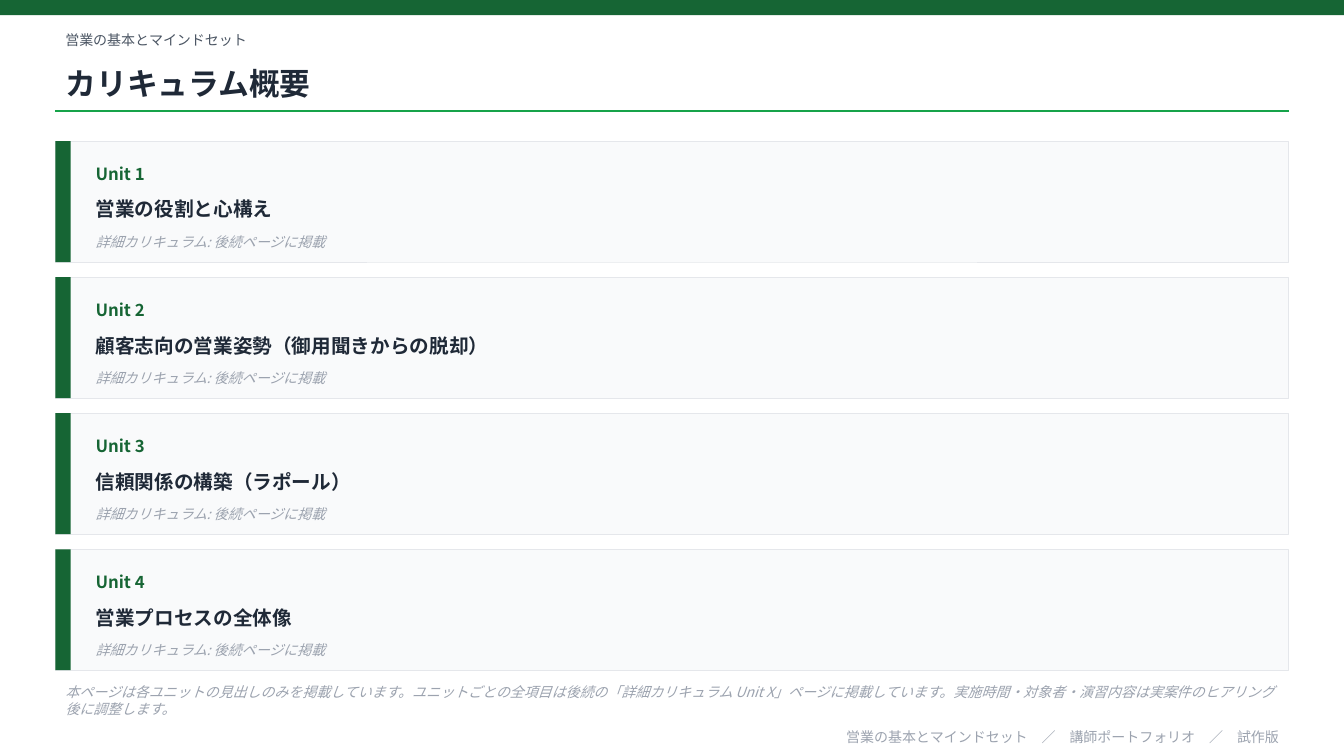
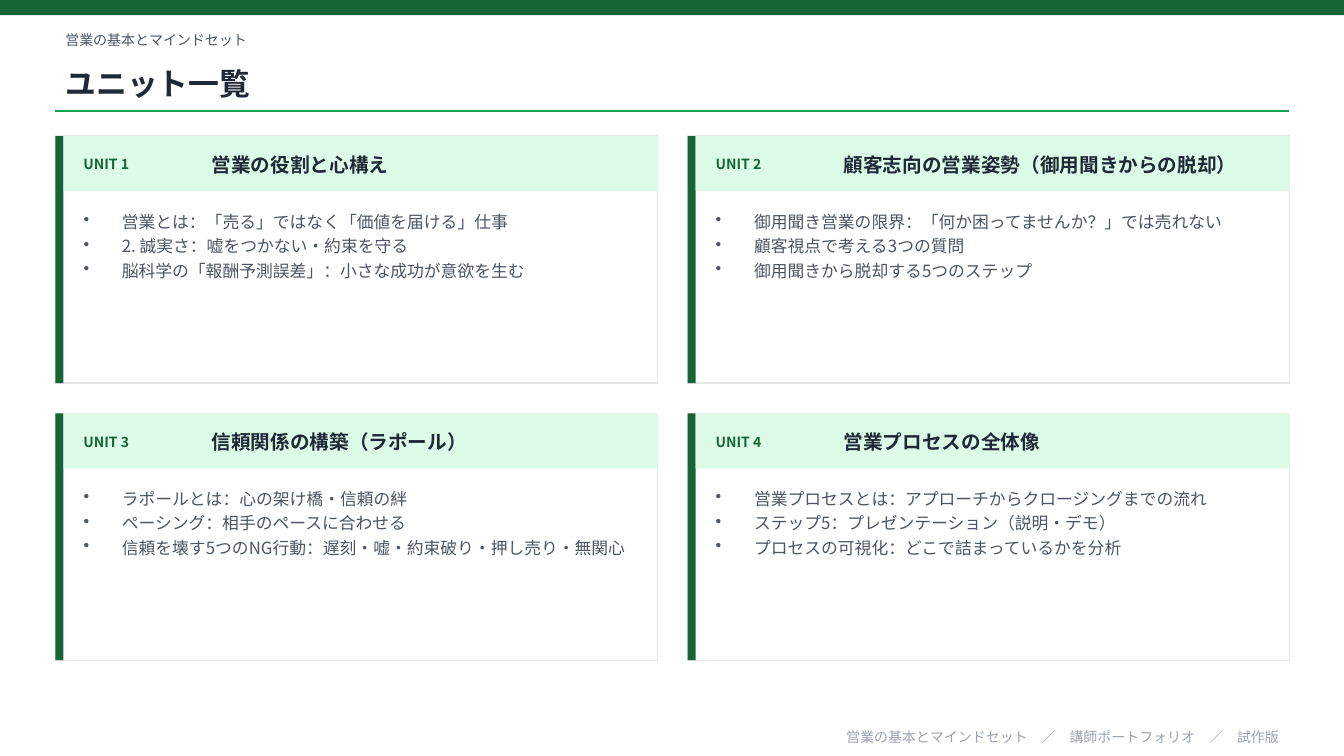
from collections import namedtuple

from lxml import etree
from pptx import Presentation
from pptx.dml.color import RGBColor
from pptx.enum.shapes import MSO_CONNECTOR, MSO_SHAPE
from pptx.enum.text import MSO_ANCHOR, MSO_AUTO_SIZE, PP_ALIGN
from pptx.oxml.ns import qn
from pptx.util import Emu, Pt

RECTANGLE = MSO_SHAPE.RECTANGLE
STRAIGHT = MSO_CONNECTOR.STRAIGHT
MIDDLE, TOP = MSO_ANCHOR.MIDDLE, MSO_ANCHOR.TOP
NO_FIT = MSO_AUTO_SIZE.NONE
LEFT, RIGHT = PP_ALIGN.LEFT, PP_ALIGN.RIGHT

EMU_PER_PX = 9144
PAGE_WIDTH, PAGE_HEIGHT = 1333, 750
MARGIN, CONTENT_WIDTH = 55, 1223
TITLE_ONLY = 5
FONT = "Noto Sans CJK JP"

GREEN, RULE_GREEN, PALE_GREEN = "166534", "16A34A", "DCFCE7"
INK, BODY, MUTED = "1F2937", "4B5563", "9CA3AF"
WHITE, PANEL, BORDER = "FFFFFF", "F9FAFB", "E5E7EB"

Box = namedtuple("Box", "left top width height")
Style = namedtuple("Style", "size color bold italic", defaults=(False, False))

TITLE_STYLE = Style(22, INK, bold=True)
HEADING = Style(14, INK, bold=True)
UNIT_LABEL = Style(12, GREEN, bold=True)
CARD_LABEL = Style(10, GREEN, bold=True)
BULLET = Style(12, BODY)
EYEBROW = Style(10, BODY)
NOTE = Style(10, MUTED, italic=True)
FOOTER = Style(10, MUTED)

COURSE = "営業の基本とマインドセット"
FOOTER_TEXT = COURSE + "　／　講師ポートフォリオ　／　試作版"
UNIT_DETAIL = "詳細カリキュラム: 後続ページに掲載"
OVERVIEW_NOTE = (
    "本ページは各ユニットの見出しのみを掲載しています。"
    "ユニットごとの全項目は後続の「詳細カリキュラム Unit X」ページに掲載しています。"
    "実施時間・対象者・演習内容は実案件のヒアリング後に調整します。"
)
UNITS = [
    ("営業の役割と心構え", [
        "営業とは：「売る」ではなく「価値を届ける」仕事",
        "2. 誠実さ：嘘をつかない・約束を守る",
        "脳科学の「報酬予測誤差」：小さな成功が意欲を生む",
    ]),
    ("顧客志向の営業姿勢（御用聞きからの脱却）", [
        "御用聞き営業の限界：「何か困ってませんか？」では売れない",
        "顧客視点で考える3つの質問",
        "御用聞きから脱却する5つのステップ",
    ]),
    ("信頼関係の構築（ラポール）", [
        "ラポールとは：心の架け橋・信頼の絆",
        "ペーシング：相手のペースに合わせる",
        "信頼を壊す5つのNG行動：遅刻・嘘・約束破り・押し売り・無関心",
    ]),
    ("営業プロセスの全体像", [
        "営業プロセスとは：アプローチからクロージングまでの流れ",
        "ステップ5：プレゼンテーション（説明・デモ）",
        "プロセスの可視化：どこで詰まっているかを分析",
    ]),
]


def px(length):
    return Emu(length * EMU_PER_PX)


def rgb(color):
    return RGBColor.from_string(color)


def place(box):
    return [px(length) for length in box]


def inner(box, left, top, width, height):
    return Box(box.left + left, box.top + top, width, height)


def add_span(para, text, style):
    span = para.add_run()
    span.text = text
    font = span.font
    font.name = FONT
    font.size = Pt(style.size)
    font.bold = style.bold
    font.italic = style.italic
    font.color.rgb = rgb(style.color)
    latin = font._element.find(qn("a:latin"))
    east_asian = etree.Element(qn("a:ea"), typeface=FONT)
    latin.addnext(east_asian)


def set_frame(frame, anchor):
    frame.word_wrap = True
    frame.auto_size = NO_FIT
    frame.vertical_anchor = anchor


def add_text(page, box, text, style, align=LEFT):
    frame = page.shapes.add_textbox(*place(box)).text_frame
    set_frame(frame, MIDDLE)
    para = frame.paragraphs[0]
    para.alignment = align
    add_span(para, text, style)


def add_bullets(page, box, items):
    frame = page.shapes.add_textbox(*place(box)).text_frame
    set_frame(frame, TOP)
    for index, item in enumerate(items):
        para = frame.add_paragraph() if index else frame.paragraphs[0]
        properties = para._p.get_or_add_pPr()
        properties.set("marL", str(px(38)))
        properties.set("indent", str(px(-38)))
        etree.SubElement(properties, qn("a:buChar"), char="•")
        para.space_after = Pt(3)
        add_span(para, item, BULLET)


def add_panel(page, box, fill, border_width=0):
    panel = page.shapes.add_shape(RECTANGLE, *place(box))
    panel.shadow.inherit = False
    panel.fill.solid()
    panel.fill.fore_color.rgb = rgb(fill)
    if border_width:
        panel.line.color.rgb = rgb(BORDER)
        panel.line.width = Pt(border_width)
    else:
        panel.line.fill.background()


def add_rule(page, left, top, width):
    rule = page.shapes.add_connector(
        STRAIGHT, px(left), px(top), px(left + width), px(top))
    rule.line.color.rgb = rgb(RULE_GREEN)
    rule.line.width = Pt(1)
    etree.SubElement(rule._element.spPr, qn("a:effectLst"))


def add_title(page, box, text):
    title = page.shapes.title
    title.left, title.top, title.width, title.height = place(box)
    set_frame(title.text_frame, MIDDLE)
    para = title.text_frame.paragraphs[0]
    para.alignment = LEFT
    add_span(para, text, TITLE_STYLE)


def add_page(deck, title):
    page = deck.slides.add_slide(deck.slide_layouts[TITLE_ONLY])
    page.background.fill.solid()
    page.background.fill.fore_color.rgb = rgb(WHITE)
    add_panel(page, Box(0, 0, PAGE_WIDTH, 15), GREEN)
    add_text(page, Box(MARGIN, 25, CONTENT_WIDTH, 30), COURSE, EYEBROW)
    add_title(page, Box(MARGIN, 55, CONTENT_WIDTH, 55), title)
    add_rule(page, MARGIN, 110, CONTENT_WIDTH)
    add_text(page, Box(MARGIN, 720, CONTENT_WIDTH, 22), FOOTER_TEXT, FOOTER, RIGHT)
    return page


def add_unit_row(page, box, number, heading):
    text_width = box.width - 50
    add_panel(page, box, PANEL, 0.5)
    add_panel(page, inner(box, 0, 0, 15, box.height), GREEN)
    add_text(page, inner(box, 30, 12, 150, 40), f"Unit {number}", UNIT_LABEL)
    add_text(page, inner(box, 30, 45, text_width, 45), heading, HEADING)
    add_text(page, inner(box, 30, 85, text_width, 30), UNIT_DETAIL, NOTE)


def add_unit_card(page, box, number, heading, items):
    add_panel(page, box, WHITE, 1)
    add_panel(page, inner(box, 0, 0, 8, box.height), GREEN)
    add_panel(page, inner(box, 8, 0, box.width - 8, 55), PALE_GREEN)
    add_text(page, inner(box, 18, 8, 120, 40), f"UNIT {number}", CARD_LABEL)
    add_text(page, inner(box, 145, 8, box.width - 160, 40), heading, HEADING)
    add_bullets(page, inner(box, 18, 70, box.width - 36, box.height - 85), items)


def build_overview(deck):
    page = add_page(deck, "カリキュラム概要")
    height, gap = 120, 15
    for index, (heading, _) in enumerate(UNITS):
        box = Box(MARGIN, 140 + index * (height + gap), CONTENT_WIDTH, height)
        add_unit_row(page, box, index + 1, heading)
    add_text(page, Box(MARGIN, 675, CONTENT_WIDTH, 40), OVERVIEW_NOTE, NOTE)


def build_unit_list(deck):
    page = add_page(deck, "ユニット一覧")
    width, height, gap = 597, 245, 30
    for index, (heading, items) in enumerate(UNITS):
        row, column = divmod(index, 2)
        box = Box(MARGIN + column * (width + gap), 135 + row * (height + gap),
                  width, height)
        add_unit_card(page, box, index + 1, heading, items)


def main():
    deck = Presentation()
    deck.slide_width, deck.slide_height = px(PAGE_WIDTH), px(PAGE_HEIGHT)
    build_overview(deck)
    build_unit_list(deck)
    deck.save("out.pptx")


if __name__ == "__main__":
    main()
